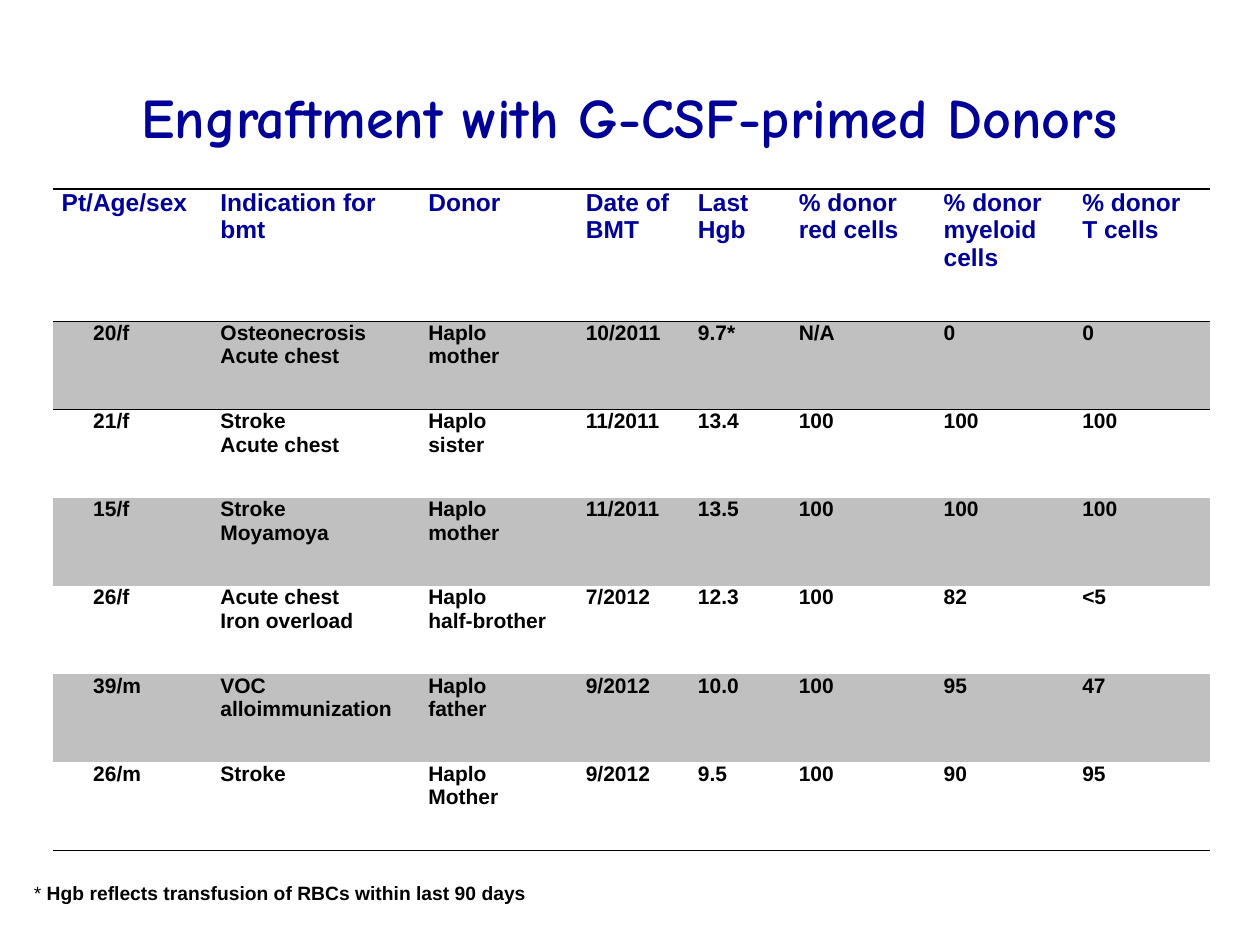
from pptx import Presentation
from pptx.dml.color import RGBColor
from pptx.enum.text import MSO_ANCHOR as Anchor, PP_ALIGN as Align
from pptx.oxml import parse_xml
from pptx.oxml.ns import nsdecls
from pptx.util import Inches, Pt

NAVY = RGBColor(0x00, 0x00, 0x99)
BLACK = RGBColor(0x00, 0x00, 0x00)
GRAY = RGBColor(0xC0, 0xC0, 0xC0)
PLAIN = "{2D5ABB26-0587-4C30-8999-92F81FD0307C}"  # no style, no grid

HEADS = ["Pt/Age/sex", "Indication for bmt", "Donor", "Date of BMT", "Last Hgb",
         "% donor red cells", "% donor myeloid cells", "% donor T cells"]
ROWS = [
    ["20/f", "Osteonecrosis\nAcute chest", "Haplo\nmother", "10/2011", "9.7*", "N/A", "0", "0"],
    ["21/f", "Stroke\nAcute chest", "Haplo\nsister", "11/2011", "13.4", "100", "100", "100"],
    ["15/f", "Stroke\nMoyamoya", "Haplo\nmother", "11/2011", "13.5", "100", "100", "100"],
    ["26/f", "Acute chest\nIron overload", "Haplo\nhalf-brother", "7/2012", "12.3", "100", "82", "<5"],
    ["39/m", "VOC\nalloimmunization", "Haplo\nfather", "9/2012", "10.0", "100", "95", "47"],
    ["26/m", "Stroke", "Haplo\nMother", "9/2012", "9.5", "100", "90", "95"],
]
WIDTHS = [1.26, 1.65, 1.25, 0.89, 0.8, 1.15, 1.1, 1.08]
HEIGHTS = [1.05] + [0.7] * len(ROWS)


def style(para, size, color, bold=True, name="Arial"):
    font = para.font
    font.size, font.bold, font.name = Pt(size), bold, name
    font.color.rgb = color


def rule(cell, side):
    """Draw a thin black border on side T or B of the cell."""
    cell._tc.get_or_add_tcPr().append(parse_xml(
        f'<a:ln{side} {nsdecls("a")} w="12700"><a:solidFill>'
        f'<a:srgbClr val="{BLACK}"/></a:solidFill></a:ln{side}>'))


deck = Presentation()
deck.slide_width, deck.slide_height = Inches(10), Inches(7.5)
slide = deck.slides.add_slide(deck.slide_layouts[6])

# Title
title = slide.shapes.add_textbox(Inches(0.5), Inches(0.3), Inches(9), Inches(1.25)).text_frame
title.word_wrap = True
title.vertical_anchor = Anchor.MIDDLE
title.text = "Engraftment with G-CSF-primed Donors"
title.paragraphs[0].alignment = Align.CENTER
style(title.paragraphs[0], 32, NAVY, name="Comic Neue")

# Table
frame = slide.shapes.add_table(len(HEIGHTS), len(WIDTHS), Inches(0.42), Inches(1.5),
                               Inches(sum(WIDTHS)), Inches(sum(HEIGHTS)))
table = frame.table
table.horz_banding = False
table._tbl.tblPr[0].text = PLAIN
for col, width in zip(table.columns, WIDTHS):
    col.width = Inches(width)
for row, height in zip(table.rows, HEIGHTS):
    row.height = Inches(height)

for r, texts in enumerate([HEADS] + ROWS):
    for c, text in enumerate(texts):
        cell = table.cell(r, c)
        cell.text = text
        cell.margin_left = cell.margin_right = Inches(0.07)
        cell.margin_top = cell.margin_bottom = 0
        for para in cell.text_frame.paragraphs:
            style(para, 12 if r else 14, BLACK if r else NAVY)
            if r and c == 0:
                para._p.get_or_add_pPr().set("marL", str(Inches(0.25)))
        if r < 2:
            rule(cell, "T")
        if r in (0, len(ROWS)):
            rule(cell, "B")
        if r % 2:
            cell.fill.solid()
            cell.fill.fore_color.rgb = GRAY
        else:
            cell.fill.background()

# Footnote
note = slide.shapes.add_textbox(Inches(0.17), Inches(6.94), Inches(7.92), Inches(0.29)).text_frame
note.word_wrap = True
note.vertical_anchor = Anchor.MIDDLE
line = note.paragraphs[0]
style(line, 11, BLACK, bold=False)
for text, bold in [("* ", False), ("Hgb reflects transfusion of RBCs within last 90 days", True)]:
    run = line.add_run()
    run.text, run.font.bold = text, bold

deck.save("out.pptx")
